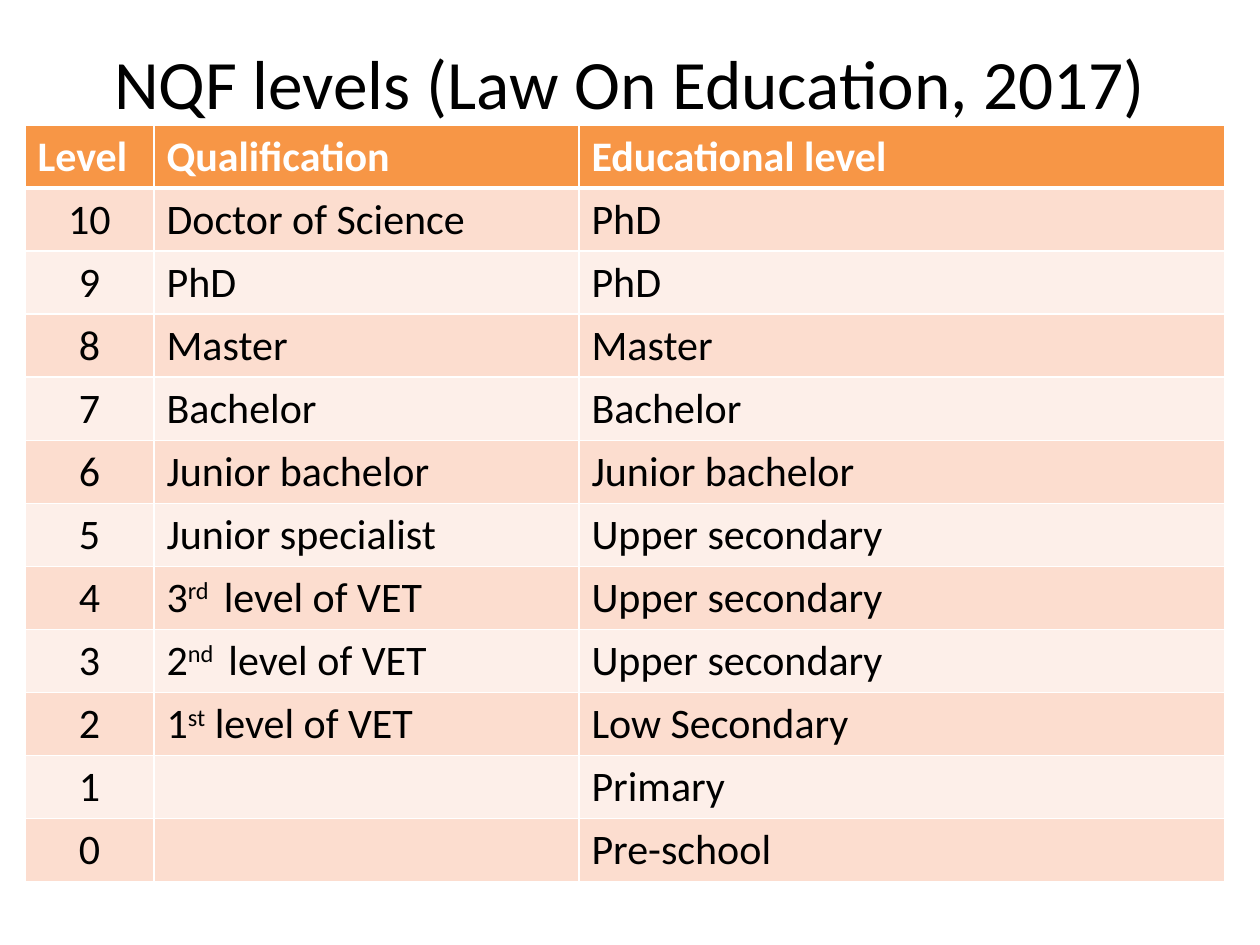
"""Build a slide with a table of NQF levels."""
from lxml import etree
from pptx import Presentation
from pptx import util as u
from pptx.dml.color import RGBColor
from pptx.enum import text
from pptx.oxml.ns import qn

TITLE = "NQF levels (Law On Education, 2017)"
HEADER = ("Level", "Qualification", "Educational level")
ROWS = [
    ("10", "Doctor of Science", "PhD"),
    ("9", "PhD", "PhD"),
    ("8", "Master", "Master"),
    ("7", "Bachelor", "Bachelor"),
    ("6", "Junior bachelor", "Junior bachelor"),
    ("5", "Junior specialist", "Upper secondary"),
    ("4", ("3", "rd ", " level of VET"), "Upper secondary"),
    ("3", ("2", "nd ", " level of VET"), "Upper secondary"),
    ("2", ("1", "st", " level of VET"), "Low Secondary"),
    ("1", "", "Primary"),
    ("0", "", "Pre-school"),
]
COL_WIDTHS = (129, 425, 646)
ROW_HEIGHT = 63
FONT = "Calibri"
BLACK = RGBColor(0, 0, 0)
WHITE = RGBColor(255, 255, 255)
ORANGE = RGBColor(0xF7, 0x96, 0x46)
BANDS = (RGBColor(0xFC, 0xDD, 0xCF), RGBColor(0xFD, 0xEF, 0xE9))


def px(n):
    return u.Emu(n * 914400 // 126)


def style(r, size, color, bold=False):
    r.font.name = FONT
    r.font.size = u.Pt(size)
    r.font.color.rgb = color
    r.font.bold = bold


def add_borders(cell, bottom):
    tc_pr = cell._tc.get_or_add_tcPr()
    for side, width in (("L", 1), ("R", 1), ("T", 1), ("B", bottom)):
        ln = etree.SubElement(tc_pr, qn(f"a:ln{side}"), w=str(u.Pt(width)))
        fill = etree.SubElement(ln, qn("a:solidFill"))
        etree.SubElement(fill, qn("a:srgbClr"), val=str(WHITE))


def fill_cell(cell, content, fill, color, bold, bottom):
    add_borders(cell, bottom)
    cell.fill.solid()
    cell.fill.fore_color.rgb = fill
    p = cell.text_frame.paragraphs[0]
    parts = content if isinstance(content, tuple) else (content,)
    for i, part in enumerate(filter(None, parts)):
        r = p.add_run()
        r.text = part
        style(r, 24, color, bold)
        if i == 1:
            r.font._element.set("baseline", "30000")
    return p


def add_title(s):
    tf = s.shapes.add_textbox(px(63), px(38), px(1134), px(87)).text_frame
    tf.word_wrap = True
    tf.vertical_anchor = text.MSO_ANCHOR.MIDDLE
    tf.text = TITLE
    p = tf.paragraphs[0]
    p.alignment = text.PP_ALIGN.CENTER
    style(p.runs[0], 39.6, BLACK)


def add_levels(s):
    count = len(ROWS) + 1
    table = s.shapes.add_table(count, len(HEADER), px(25), px(125),
                               px(sum(COL_WIDTHS)), px(ROW_HEIGHT * count)).table
    for col, width in zip(table.columns, COL_WIDTHS):
        col.width = px(width)
    for c, label in enumerate(HEADER):
        fill_cell(table.cell(0, c), label, ORANGE, WHITE, True, 3)
    for i, row in enumerate(ROWS):
        for c, content in enumerate(row):
            p = fill_cell(table.cell(i + 1, c), content, BANDS[i % 2], BLACK, False, 1)
            if c == 0:
                p.alignment = text.PP_ALIGN.CENTER


def main():
    prs = Presentation()
    prs.slide_width, prs.slide_height = px(1260), px(945)
    s = prs.slides.add_slide(prs.slide_layouts[6])
    add_title(s)
    add_levels(s)
    prs.save("out.pptx")


if __name__ == "__main__":
    main()
